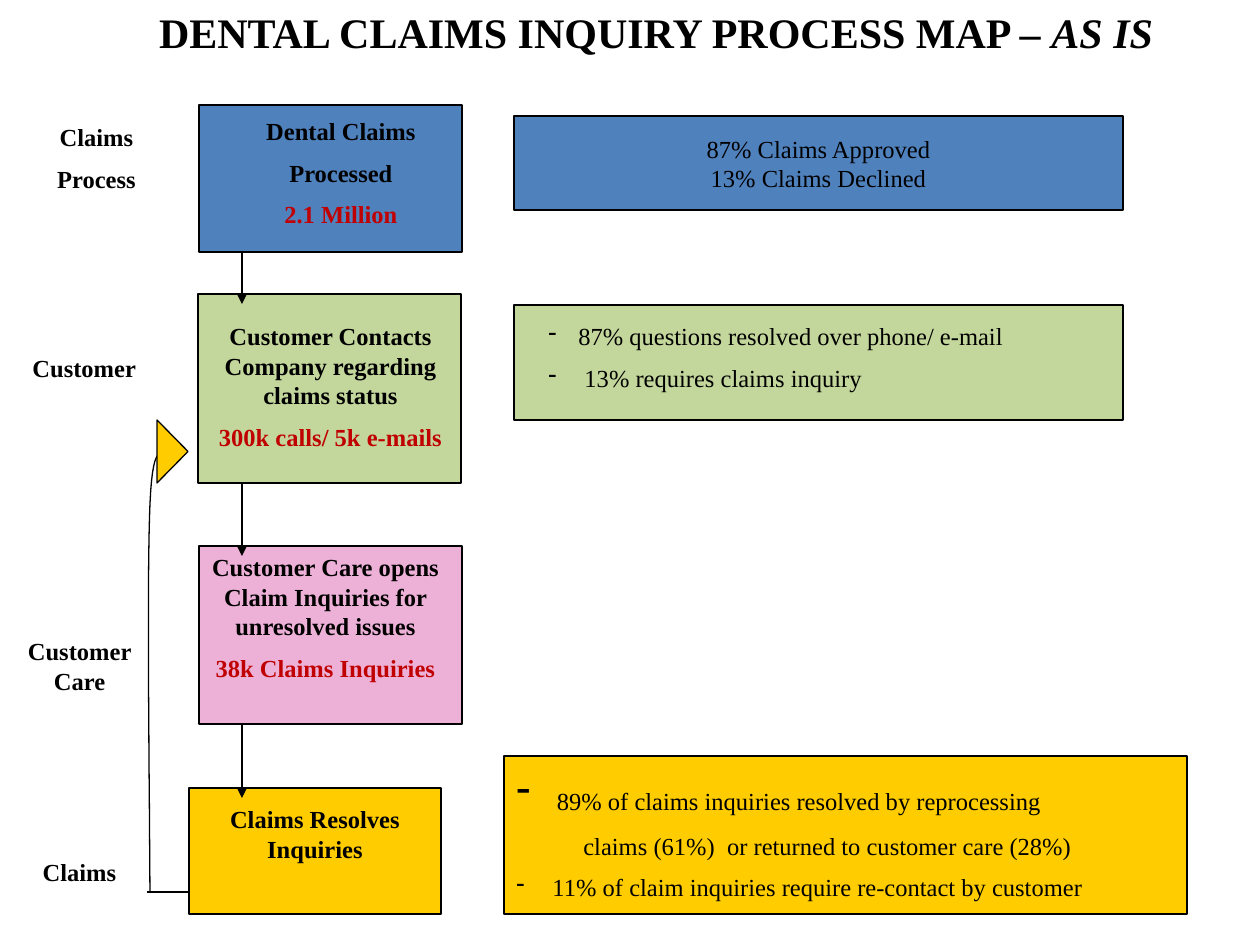
import pptx
import pptx.util
import pptx.dml.color
import pptx.enum.shapes
import pptx.enum.text
import pptx.oxml

SHAPES = pptx.enum.shapes.MSO_SHAPE
ANCHOR = pptx.enum.text.MSO_ANCHOR
ALIGN = pptx.enum.text.PP_ALIGN
FONT = "Times New Roman"
COLORS = {"blue": "4F81BD", "green": "C3D69B", "pink": "EDB1D8",
          "gold": "FFCC00", "black": "000000", "red": "C00000"}

TITLE = ((136, 0, 1040, 63), "DENTAL CLAIMS INQUIRY PROCESS MAP – ", "AS IS")
STEPS = [
    ((199, 105, 263, 147), "blue", (147, 110, 388, 176),
     ["Dental Claims", "Processed"], "2.1 Million"),
    ((198, 294, 263, 189), "green", (188, 315, 285, 146),
     ["Customer Contacts Company regarding claims status"], "300k calls/ 5k e-mails"),
    ((199, 546, 263, 178), "pink", (189, 546, 273, 176),
     ["Customer Care opens Claim Inquiries for unresolved issues"], "38k Claims Inquiries"),
    ((189, 788, 252, 126), "gold", (210, 798, 210, 101),
     ["Claims Resolves Inquiries"], None),
]
LABELS = [
    ((0, 116, 193, 86), ["Claims", "Process"], ALIGN.CENTER),
    ((20, 347, 159, 42), ["Customer"], ALIGN.LEFT),
    ((0, 630, 159, 72), ["Customer Care"], ALIGN.CENTER),
    ((0, 851, 159, 42), ["Claims"], ALIGN.CENTER),
]
APPROVALS = ((514, 116, 609, 94), "blue", ["87% Claims Approved", "13% Claims Declined"])
CONTACTS = ((514, 305, 609, 115), "green", (536, 315, 567, 86),
            ["87% questions resolved over phone/ e-mail", " 13% requires claims inquiry"])
OUTCOMES = ((504, 756, 683, 158), "gold",
            [("89% of claims inquiries resolved by reprocessing", True),
             ("claims (61%)  or returned to customer care (28%)", False),
             (" 11% of claim inquiries require re-contact by customer", True)])
ARROW_X = 242
ARROWS = [(252, 304), (483, 556), (724, 798)]
LOOP_LINE = (147, 892, 189, 892)
LOOP_CURVES = [((150, 892), (149, 735), (147, 577), (150, 504)),
               ((150, 504), (153, 431), (165, 461), (168, 452))]
LOOP_HEAD = (141, 436, 63, 31)
CURVE_STEPS = 16
BULLET_INDENT = 30
CONTINUED_INDENT = 67


def px(value):
    return pptx.util.Emu(round(value * 914400 / 126))


def color(name):
    return pptx.dml.color.RGBColor.from_string(COLORS[name])


def outline(shape):
    shape.line.color.rgb = color("black")
    shape.line.width = pptx.util.Pt(0.75)


def add_block(page, place, fill, kind=SHAPES.RECTANGLE):
    block = page.shapes.add_shape(kind, *map(px, place))
    block.shadow.inherit = False
    block.fill.solid()
    block.fill.fore_color.rgb = color(fill)
    outline(block)
    block.text_frame.word_wrap = True
    return block


def add_box(page, place):
    box = page.shapes.add_textbox(*map(px, place))
    box.text_frame.word_wrap = True
    return box


def add_para(box, text, align=ALIGN.LEFT, bold=False, ink="black", size=14, gap=7):
    frame = box.text_frame
    first = not frame.paragraphs[0].runs
    para = frame.paragraphs[0] if first else frame.add_paragraph()
    para.alignment = align
    para.space_before = pptx.util.Pt(0 if first else gap)
    para.font.name = FONT
    para.font.size = pptx.util.Pt(size)
    para.font.bold = bold
    para.font.color.rgb = color(ink)
    para.add_run().text = text
    return para


def indent(para, margin, bullet):
    props = para._p.get_or_add_pPr()
    props.set("marL", str(px(margin)))
    props.set("indent", str(-px(margin) if bullet else 0))
    if bullet:
        mark = pptx.oxml.parse_xml(
            '<a:buChar xmlns:a="http://schemas.openxmlformats.org/drawingml/2006/main" char="-"/>')
        fonts = props.find(pptx.oxml.ns.qn("a:defRPr"))
        if fonts is None:
            props.append(mark)
        else:
            fonts.addprevious(mark)


def add_line(page, x1, y1, x2, y2, arrow=False):
    line = page.shapes.add_connector(
        pptx.enum.shapes.MSO_CONNECTOR.STRAIGHT, px(x1), px(y1), px(x2), px(y2))
    outline(line)
    if arrow:
        tail = line.line._get_or_add_ln().makeelement(
            pptx.oxml.ns.qn("a:tailEnd"), {"type": "triangle"})
        line.line._get_or_add_ln().append(tail)
    props = line._element.spPr
    props.append(props.makeelement(pptx.oxml.ns.qn("a:effectLst"), {}))


def curve_point(curve, t):
    weights = ((1 - t) ** 3, 3 * t * (1 - t) ** 2, 3 * t * t * (1 - t), t ** 3)
    return tuple(px(sum(w * point[axis] for w, point in zip(weights, curve)))
                 for axis in (0, 1))


def add_loop(page):
    points = [curve_point(curve, step / CURVE_STEPS)
              for curve in LOOP_CURVES for step in range(1, CURVE_STEPS + 1)]
    builder = page.shapes.build_freeform(*curve_point(LOOP_CURVES[0], 0))
    builder.add_line_segments(points, close=False)
    loop = builder.convert_to_shape()
    loop.shadow.inherit = False
    loop.fill.background()
    outline(loop)
    add_line(page, *LOOP_LINE)
    add_block(page, LOOP_HEAD, "gold", SHAPES.ISOSCELES_TRIANGLE).rotation = 90


def main():
    deck = pptx.Presentation()
    deck.slide_width, deck.slide_height = px(1260), px(945)
    page = deck.slides.add_slide(deck.slide_layouts[6])

    place, text, emphasis = TITLE
    heading = add_para(add_box(page, place), text, ALIGN.CENTER, True, size=24)
    span = heading.add_run()
    span.text = emphasis
    span.font.italic = True

    for place, fill, text_place, lines, volume in STEPS:
        add_block(page, place, fill)
        box = add_box(page, text_place)
        for text in lines:
            add_para(box, text, ALIGN.CENTER, True)
        if volume:
            add_para(box, volume, ALIGN.CENTER, True, "red")

    for place, lines, align in LABELS:
        box = add_box(page, place)
        for text in lines:
            add_para(box, text, align, True)

    place, fill, lines = APPROVALS
    block = add_block(page, place, fill)
    block.text_frame.vertical_anchor = ANCHOR.MIDDLE
    for text in lines:
        add_para(block, text, ALIGN.CENTER, gap=0)

    place, fill, text_place, lines = CONTACTS
    add_block(page, place, fill)
    box = add_box(page, text_place)
    for text in lines:
        indent(add_para(box, text), BULLET_INDENT, True)

    place, fill, lines = OUTCOMES
    block = add_block(page, place, fill)
    block.text_frame.vertical_anchor = ANCHOR.MIDDLE
    for number, (text, bullet) in enumerate(lines):
        para = add_para(block, text if number else " ")
        indent(para, BULLET_INDENT if bullet else CONTINUED_INDENT, bullet)
        if number == 0:
            para.runs[0].font.size = pptx.util.Pt(24)
            para.add_run().text = text

    for top, bottom in ARROWS:
        add_line(page, ARROW_X, top, ARROW_X, bottom, arrow=True)
    add_loop(page)
    deck.save("out.pptx")


if __name__ == "__main__":
    main()
